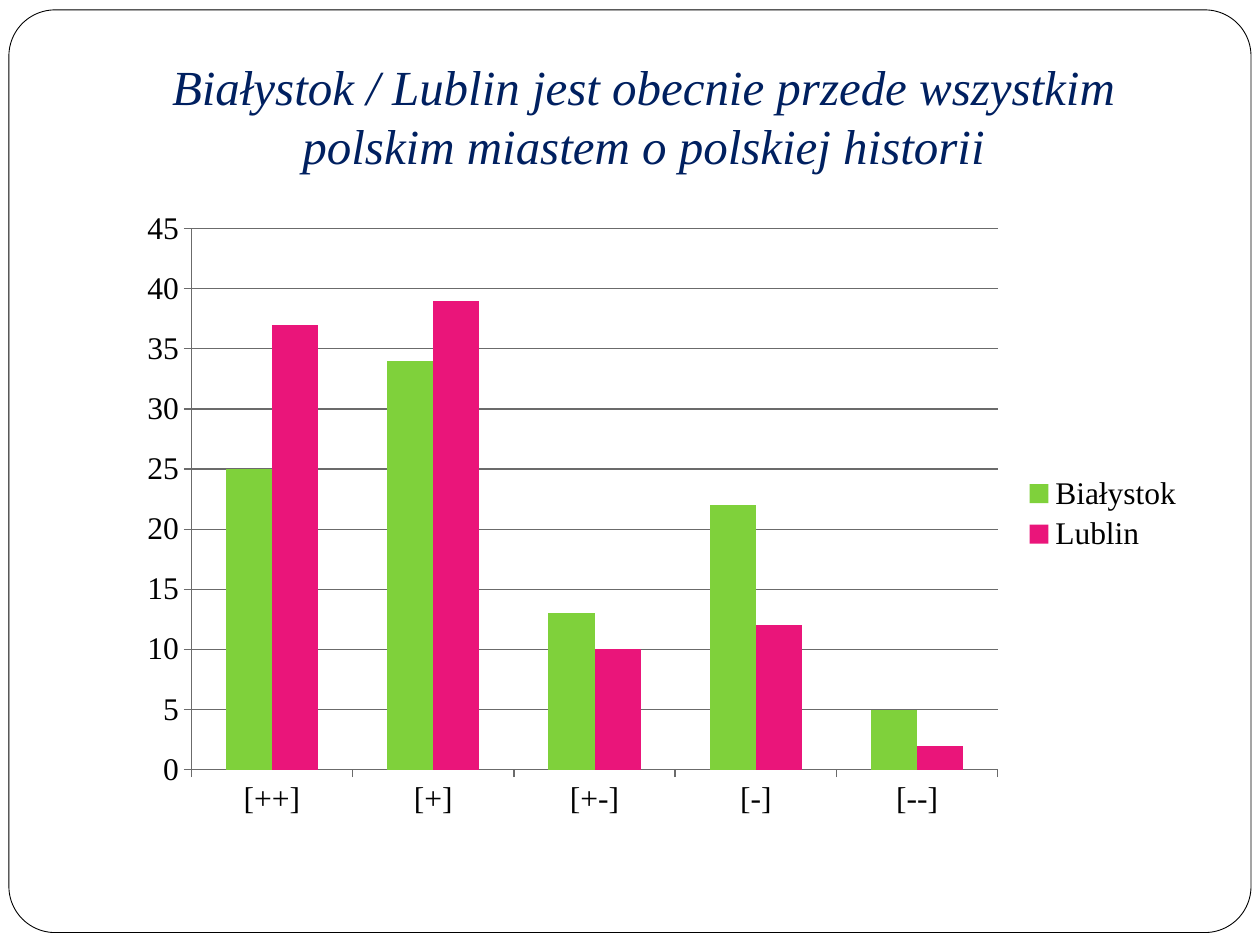
import dataclasses

import pptx
import pptx.chart.data
import pptx.dml.color
import pptx.enum.chart
import pptx.enum.shapes
import pptx.enum.text
import pptx.util
from pptx.util import Cm


@dataclasses.dataclass(frozen=True)
class Theme:
    """Colours, font and type sizes of the slide."""
    font: str = "Times New Roman"
    title_size: int = 28
    chart_size: int = 18
    paper: str = "FFFFFF"
    ink: str = "000000"
    title: str = "002060"
    rule: str = "6B6B6B"
    series: tuple = ("7FD13B", "EA157A")


THEME = Theme()


def rgb(value):
    """Return the colour for a hex string."""
    return pptx.dml.color.RGBColor.from_string(value)


def style_font(font, size, color, italic=False):
    """Apply the theme font with a size and colour."""
    font.name = THEME.font
    font.size = pptx.util.Pt(size)
    font.italic = italic
    font.color.rgb = rgb(color)


def style_line(line, color, width):
    """Give a line its colour and width in points."""
    line.color.rgb = rgb(color)
    line.width = pptx.util.Pt(width)


def add_frame(s, left, top, width, height):
    """Draw the rounded border of the slide in the given box."""
    sp = s.shapes.add_shape(pptx.enum.shapes.MSO_SHAPE.ROUNDED_RECTANGLE,
                            left, top, width, height)
    sp.adjustments[0] = 0.05
    sp.shadow.inherit = False
    sp.fill.solid()
    sp.fill.fore_color.rgb = rgb(THEME.paper)
    style_line(sp.line, THEME.ink, 0.5)


def add_title(s, text, left, top, width, height):
    """Write the centred title at the bottom of the given box."""
    tf = s.shapes.add_textbox(left, top, width, height).text_frame
    tf.word_wrap = True
    tf.vertical_anchor = pptx.enum.text.MSO_ANCHOR.BOTTOM
    tf.margin_bottom = Cm(0.25)
    p = tf.paragraphs[0]
    p.text = text
    p.alignment = pptx.enum.text.PP_ALIGN.CENTER
    style_font(p.font, THEME.title_size, THEME.title, italic=True)


def add_city_chart(s, categories, cities, left, top, width, height):
    """Place the clustered columns comparing cities in the given box."""
    data = pptx.chart.data.CategoryChartData()
    data.categories = categories
    for city, values in cities.items():
        data.add_series(city, values)
    chart = s.shapes.add_chart(
        pptx.enum.chart.XL_CHART_TYPE.COLUMN_CLUSTERED,
        left, top, width, height, data).chart
    chart.has_title = False
    style_font(chart.font, THEME.chart_size, THEME.ink)

    chart.has_legend = True
    chart.legend.position = pptx.enum.chart.XL_LEGEND_POSITION.RIGHT
    chart.legend.include_in_layout = False

    for axis in (chart.category_axis, chart.value_axis):
        axis.major_tick_mark = pptx.enum.chart.XL_TICK_MARK.OUTSIDE
        axis.minor_tick_mark = pptx.enum.chart.XL_TICK_MARK.NONE
        style_line(axis.format.line, THEME.rule, 0.75)
    axis = chart.value_axis
    axis.minimum_scale, axis.maximum_scale, axis.major_unit = 0, 45, 5
    axis.has_major_gridlines = True
    style_line(axis.major_gridlines.format.line, THEME.rule, 0.75)

    plot = chart.plots[0]
    plot.vary_by_categories = False
    plot.gap_width = 150
    plot.overlap = 0
    for series, color in zip(plot.series, THEME.series):
        series.format.fill.solid()
        series.format.fill.fore_color.rgb = rgb(color)


def main():
    """Build the slide and save it."""
    prs = pptx.Presentation()
    prs.slide_width, prs.slide_height = Cm(25.4), Cm(19.05)
    s = prs.slides.add_slide(prs.slide_layouts[6])
    add_frame(s, Cm(0.18), Cm(0.2), Cm(25.04), Cm(18.6))
    add_title(s, "Białystok / Lublin jest obecnie przede wszystkim "
                 "polskim miastem o polskiej historii",
              Cm(2.18), Cm(0.58), Cm(21.59), Cm(3.18))
    add_city_chart(s, ["[++]", "[+]", "[+-]", "[-]", "[--]"],
                   {"Białystok": (25, 34, 13, 22, 5),
                    "Lublin": (37, 39, 10, 12, 2)},
                   Cm(2.54), Cm(4.01), Cm(21.59), Cm(12.7))
    prs.save("out.pptx")


if __name__ == "__main__":
    main()
